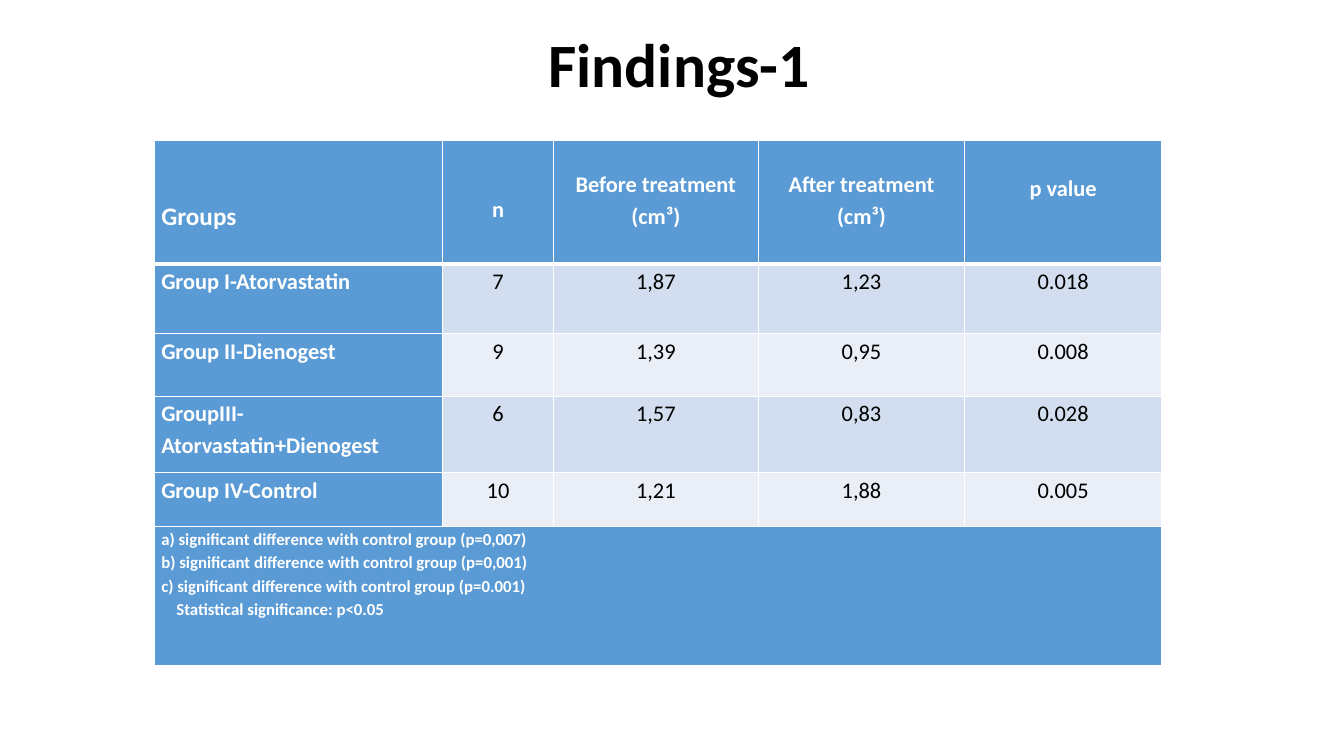
from lxml.etree import SubElement
from pptx import Presentation
from pptx.dml.color import RGBColor
from pptx.enum.text import MSO_ANCHOR, PP_ALIGN
from pptx.oxml.ns import qn
from pptx.util import Inches, Pt

WHITE = RGBColor(0xFF, 0xFF, 0xFF)
BLACK = RGBColor(0x00, 0x00, 0x00)
BLUE = RGBColor(0x5B, 0x9B, 0xD5)
BAND_DARK = RGBColor(0xD2, 0xDE, 0xEF)
BAND_LIGHT = RGBColor(0xEA, 0xEF, 0xF7)

COLUMN_WIDTHS = [2.86, 1.1, 2.03, 2.05, 1.95]
ROW_HEIGHTS = [1.23, 0.69, 0.62, 0.76, 0.53, 1.38]

# Heading text, size and distance from the top of the cell
HEADINGS = [
    ("Groups", 18, 0.56),
    ("n", 16, 0.52),
    ("Before treatment\n(cm³)", 16, 0.27),
    ("After treatment (cm³)", 16, 0.27),
    ("p value", 16, 0.31),
]
RESULTS = [
    ("Group I-Atorvastatin", "7", "1,87", "1,23", "0.018"),
    ("Group II-Dienogest", "9", "1,39", "0,95", "0.008"),
    ("GroupIII-Atorvastatin+Dienogest", "6", "1,57", "0,83", "0.028"),
    ("Group IV-Control", "10", "1,21", "1,88", "0.005"),
]
FOOTNOTES = "\n".join([
    "a) significant difference with control group (p=0,007)",
    "b) significant difference with control group (p=0,001)",
    "c) significant difference with control group (p=0.001)",
    "Statistical significance: p<0.05",
])


def style_cell(cell, fill, top_line=1, bottom_line=1):
    """Give a cell its margins, white borders and fill."""
    cell.margin_left = cell.margin_right = Inches(0.07)
    cell.margin_top = cell.margin_bottom = 0
    properties = cell._tc.get_or_add_tcPr()
    for side, width in (("L", 1), ("R", 1), ("T", top_line), ("B", bottom_line)):
        line = SubElement(properties, qn(f"a:ln{side}"), w=str(Pt(width)))
        solid = SubElement(line, qn("a:solidFill"))
        SubElement(solid, qn("a:srgbClr"), val=str(WHITE))
    cell.fill.solid()
    cell.fill.fore_color.rgb = fill


def write(frame, text, size, color, bold, align, spacing=1.15):
    """Write one paragraph per line of text, all in the same style."""
    frame.text = text
    for paragraph in frame.paragraphs:
        paragraph.alignment = align
        paragraph.line_spacing = spacing
        paragraph.font.name = "Calibri"
        paragraph.font.size = Pt(size)
        paragraph.font.bold = bold
        paragraph.font.color.rgb = color


presentation = Presentation()
presentation.slide_width = Inches(13.33)
presentation.slide_height = Inches(7.5)
slide = presentation.slides.add_slide(presentation.slide_layouts[6])

# Title
title = slide.shapes.add_textbox(
    Inches(0.99), Inches(-0.06), Inches(11.5), Inches(1.45)).text_frame
title.word_wrap = True
title.vertical_anchor = MSO_ANCHOR.MIDDLE
write(title, "Findings-1", 44, BLACK, True, PP_ALIGN.CENTER, 0.9)

# Table grid
findings = slide.shapes.add_table(
    len(ROW_HEIGHTS), len(COLUMN_WIDTHS), Inches(1.53), Inches(1.39),
    Inches(sum(COLUMN_WIDTHS)), Inches(sum(ROW_HEIGHTS))).table
findings.first_col = True
for column, width in zip(findings.columns, COLUMN_WIDTHS):
    column.width = Inches(width)
for row, height in zip(findings.rows, ROW_HEIGHTS):
    row.height = Inches(height)

# Heading row
for c, (heading, size, offset) in enumerate(HEADINGS):
    cell = findings.cell(0, c)
    style_cell(cell, BLUE, bottom_line=3)
    cell.margin_top = Inches(offset)
    align = PP_ALIGN.CENTER if c else PP_ALIGN.JUSTIFY
    write(cell.text_frame, heading, size, WHITE, True, align)

# Treatment groups
for r, result in enumerate(RESULTS, start=1):
    band = BAND_DARK if r % 2 else BAND_LIGHT
    for c, value in enumerate(result):
        cell = findings.cell(r, c)
        style_cell(cell, band if c else BLUE, top_line=3 if r == 1 else 1)
        if c:
            write(cell.text_frame, value, 16, BLACK, False, PP_ALIGN.CENTER)
        else:
            write(cell.text_frame, value, 16, WHITE, True, PP_ALIGN.JUSTIFY)

# Footnotes across the whole width
last_row = len(ROW_HEIGHTS) - 1
notes = findings.cell(last_row, 0)
notes.merge(findings.cell(last_row, len(COLUMN_WIDTHS) - 1))
style_cell(notes, BLUE)
write(notes.text_frame, FOOTNOTES, 12, WHITE, True, PP_ALIGN.JUSTIFY)
significance = notes.text_frame.paragraphs[-1]
significance._p.get_or_add_pPr().set("marL", str(Inches(0.15)))

presentation.save("out.pptx")
